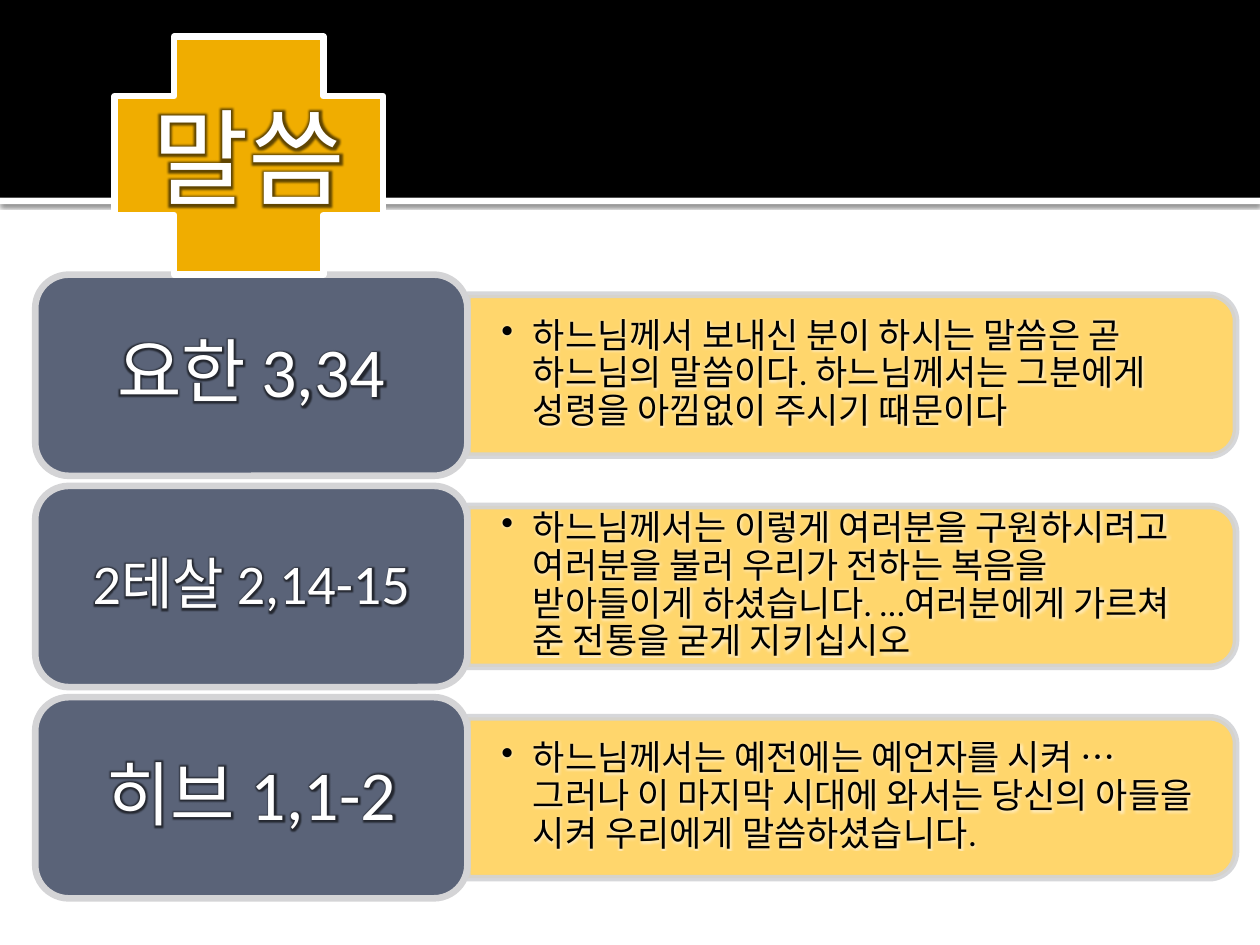
import pptx
import pptx.util
import pptx.dml.color
import pptx.enum.shapes
import pptx.enum.text
import pptx.oxml
import pptx.oxml.ns
from lxml import etree
from pptx.util import Inches

SHAPE = pptx.enum.shapes.MSO_SHAPE
ALIGN = pptx.enum.text.PP_ALIGN
MIDDLE = pptx.enum.text.MSO_ANCHOR.MIDDLE
qn = pptx.oxml.ns.qn

ROWS = [
    ("요한 3,34", 40,
     "하느님께서 보내신 분이 하시는 말씀은 곧 하느님의 말씀이다. "
     "하느님께서는 그분에게 성령을 아낌없이 주시기 때문이다"),
    ("2테살 2,14-15", 32,
     "하느님께서는 이렇게 여러분을 구원하시려고 여러분을 불러 우리가 전하는 복음을 "
     "받아들이게 하셨습니다. …여러분에게 가르쳐 준 전통을 굳게 지키십시오"),
    ("히브 1,1-2", 40,
     "하느님께서는 예전에는 예언자를 시켜 …그러나 이 마지막 시대에 와서는 당신의 "
     "아들을 시켜 우리에게 말씀하셨습니다."),
]


def rgb(color):
    return pptx.dml.color.RGBColor.from_string(color)


def add_color(parent, color, alpha):
    c = etree.SubElement(parent, qn("a:srgbClr"), val=color)
    etree.SubElement(c, qn("a:alpha"), val=str(alpha * 1000))


def add_box(s, kind, box, fill, line=None):
    sp = s.shapes.add_shape(kind, *map(Inches, box))
    sp.shadow.inherit = False
    sp.fill.solid()
    sp.fill.fore_color.rgb = rgb(fill)
    if line:
        sp.line.color.rgb = rgb(line)
        sp.line.width = pptx.util.Pt(3.78)
    else:
        sp.line.fill.background()
    return sp


def set_alpha(sp, percent):
    """Make both the fill and the line partly transparent."""
    for c in sp._element.spPr.iter(qn("a:srgbClr")):
        etree.SubElement(c, qn("a:alpha"), val=str(percent * 1000))


def write(sp, text, size, color, glow, align, inset, spacing=None):
    tf = sp.text_frame
    frame = {"word_wrap": True, "vertical_anchor": MIDDLE,
             "margin_left": Inches(inset[0]), "margin_right": Inches(inset[0]),
             "margin_top": Inches(inset[1]), "margin_bottom": Inches(inset[1])}
    for name, value in frame.items():
        setattr(tf, name, value)
    p = tf.paragraphs[0]
    p.alignment = align
    p.line_spacing = spacing
    r = p.add_run()
    r.text = text
    r.font.size = pptx.util.Pt(size)
    r.font.color.rgb = rgb(color)
    effects = etree.SubElement(r.font._element, qn("a:effectLst"))
    halo = etree.SubElement(effects, qn("a:glow"), rad=str(pptx.util.Pt(glow[1])))
    add_color(halo, glow[0], 60)
    r.font.name = "Calibri"
    return p


def add_bullet(p):
    pPr = p._p.get_or_add_pPr()
    pPr.set("marL", str(Inches(0.25)))
    pPr.set("indent", str(-Inches(0.25)))
    etree.SubElement(pPr, qn("a:buChar"), char="•")


def add_header(s, width, height):
    rule = add_box(s, SHAPE.RECTANGLE, (0, height, width, 0.05), "FFFFFF")
    effects = rule._element.spPr.find(qn("a:effectLst"))
    shadow = etree.SubElement(
        effects, qn("a:outerShdw"), blurRad=str(pptx.util.Pt(2.5)),
        dist=str(pptx.util.Pt(0.8)), dir="5400000", algn="tl", rotWithShape="0")
    add_color(shadow, "000000", 60)
    add_box(s, SHAPE.RECTANGLE, (0, 0, width, height), "000000")


def add_verse(s, box, label, size, verse):
    """Place a reference label on the left and its verse bar on the right."""
    left, top, width, height = box
    label_w = 3.43
    bar_w, bar_h = width - label_w, height * 0.8
    bar_left, bar_top = left + label_w, top + height * 0.1

    # The bar stands upright and is turned so that its round end faces right.
    shift = (bar_w - bar_h) / 2
    bar = add_box(s, SHAPE.ROUND_2_SAME_RECTANGLE,
                  (bar_left + shift, bar_top - shift, bar_h, bar_w),
                  "FFD25D", "D2D3D6")
    bar.rotation = 90
    set_alpha(bar, 90)

    tb = s.shapes.add_textbox(*map(Inches, (bar_left, bar_top + 0.06,
                                            bar_w - 0.06, bar_h - 0.13)))
    add_bullet(write(tb, verse, 20, "000000", ("FFFFFF", 2), ALIGN.LEFT,
                     (0.27, 0.14), 0.9))

    tag = add_box(s, SHAPE.ROUNDED_RECTANGLE, (left, top, label_w, height),
                  "5A6378", "D4D4D6")
    write(tag, label, size, "FFFFFF", ("000000", 4), ALIGN.CENTER,
          (0.17, 0.08), 0.9)


def add_verses(s, box):
    left, top, width, height = box
    gap = 0.08
    row_h = (height - gap * (len(ROWS) - 1)) / len(ROWS)
    for i, row in enumerate(ROWS):
        add_verse(s, (left, top + i * (row_h + gap), width, row_h), *row)


def add_cross(s, box, text):
    cross = add_box(s, SHAPE.CROSS, box, "F0AD00", "FFFFFF")
    write(cross, text, 60, "FFFFFF", ("000000", 5), ALIGN.CENTER, (0.1, 0.05))


def main():
    prs = pptx.Presentation()
    prs.slide_width, prs.slide_height = Inches(10), Inches(7.5)
    s = prs.slides.add_slide(prs.slide_layouts[6])
    add_header(s, 10, 1.57)
    add_verses(s, (0.28, 2.18, 9.53, 4.95))
    add_cross(s, (0.91, 0.29, 2.13, 1.89), "말씀")
    prs.save("out.pptx")


if __name__ == "__main__":
    main()
